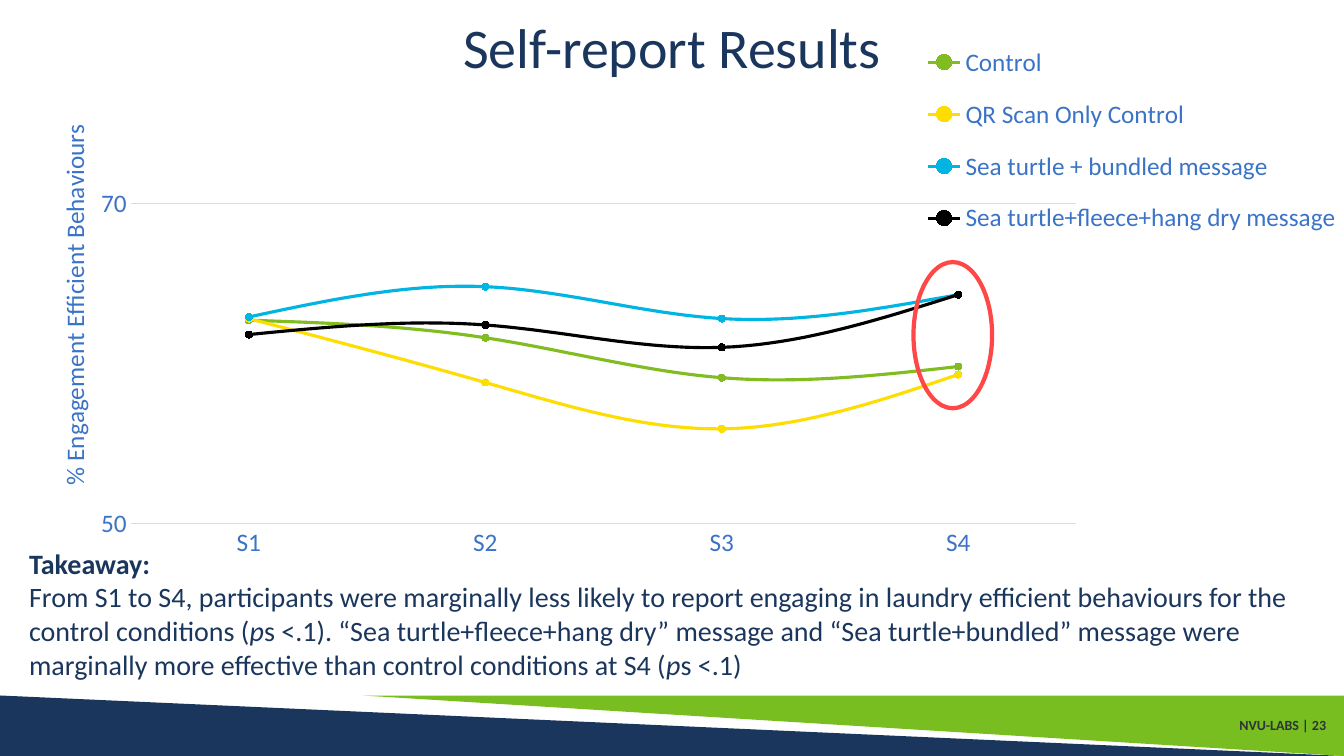
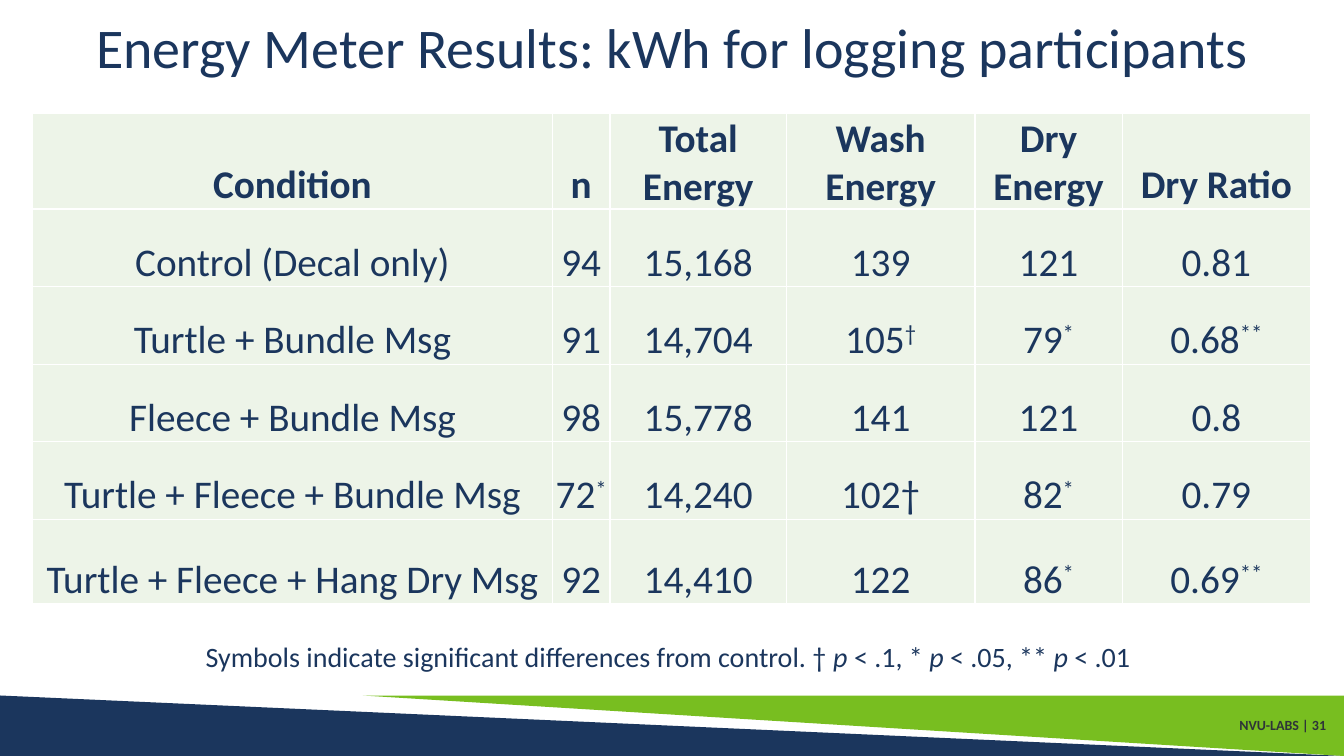
from lxml import etree
from pptx import Presentation
from pptx.chart.data import CategoryChartData
from pptx.dml.color import RGBColor
from pptx.enum.chart import XL_CHART_TYPE as ChartType, XL_LEGEND_POSITION as LegendPosition
from pptx.enum.chart import XL_MARKER_STYLE as MarkerStyle, XL_TICK_MARK as TickMark
from pptx.enum.shapes import MSO_SHAPE as Preset
from pptx.enum.text import MSO_ANCHOR as Anchor, MSO_AUTO_SIZE as AutoSize, PP_ALIGN as Align
from pptx.oxml import parse_xml
from pptx.oxml.ns import nsdecls, qn
from pptx.util import Inches, Pt

# Shared look
FONT = "Calibri"
NAVY, GREEN, GRAY = "1B365D", "78BE20", "2E3438"
AXIS_BLUE, GRID_BLUE = "3B74C6", "D2DFF2"
RED, WHITE, CELL_GREEN = "FF4747", "FFFFFF", "EDF4E8"
WIDTH, HEIGHT = 13.33, 7.5
BANDS = [(0, WIDTH, 0, NAVY), (3.6, 9.73, 180, GREEN)]  # left, width, rotation, colour
BAND_TOP, BAND_HEIGHT = 6.9, 0.6
FOOTER = "NVU-LABS | {}"

# Content of the chart slide
SURVEYS = ["S1", "S2", "S3", "S4"]
SERIES = [
    ("Control", "81BD20", [62.7, 61.6, 59.1, 59.8]),
    ("QR Scan Only Control", "FEDD00", [62.8, 58.8, 55.9, 59.3]),
    ("Sea turtle + bundled message", "00B5E2", [62.9, 64.8, 62.8, 64.3]),
    ("Sea turtle+fleece+hang dry message", "000000", [61.8, 62.4, 61, 64.3]),
]
AXIS_TITLE = "% Engagement Efficient Behaviours"
TAKEAWAY = [  # paragraphs of (text, style) runs
    [("Takeaway:", "bold")],
    [
        ("From S1 to S4, participants were marginally less likely to report engaging in laundry "
         "efficient behaviours for the control conditions (", ""),
        ("p", "italic"),
        ("s <.1). “Sea turtle+fleece+hang dry” message and “Sea turtle+bundled” message were "
         "marginally more effective than control conditions at S4 (", ""),
        ("p", "italic"),
        ("s <.1)", ""),
    ],
]

# Content of the table slide; a tuple holds a value and its superscript
TABLE_ROWS = [
    ["Condition", "n", "Total Energy", "Wash Energy", "Dry Energy", "Dry Ratio"],
    ["Control (Decal only)", "94", "15,168", "139", "121", "0.81"],
    ["Turtle + Bundle Msg", "91", "14,704", ("105", "†"), ("79", "*"), ("0.68", "**")],
    ["Fleece + Bundle Msg", "98", "15,778", "141", "121", "0.8"],
    ["Turtle + Fleece + Bundle Msg", ("72", "*"), "14,240", "102†", ("82", "*"), "0.79"],
    ["Turtle + Fleece + Hang Dry Msg", "92", "14,410", "122", ("86", "*"), ("0.69", "**")],
]
COLUMN_WIDTHS = [5.16, 0.57, 1.75, 1.87, 1.46, 1.87]
ROW_HEIGHTS = [0.86, 0.77, 0.77, 0.77, 0.77, 0.84]
SYMBOL_NOTE = [[
    ("Symbols indicate significant differences from control. † ", ""), ("p ", "italic"),
    ("< .1, * ", ""), ("p", "italic"), (" < .05, ** ", ""), ("p", "italic"), (" < .01", ""),
]]


def rgb(color):
    return RGBColor.from_string(color)


def box(*lengths):
    return [Inches(length) for length in lengths]


def set_font(font, size, color, bold=False):
    font.name, font.size, font.bold = FONT, Pt(size), bold
    font.color.rgb = rgb(color)


def set_line(line, color, width):
    line.color.rgb = rgb(color)
    line.width = Pt(width)


def add_runs(paragraph, runs, size, color, bold=False):
    for text, style in runs:
        run = paragraph.add_run()
        run.text = text
        set_font(run.font, size, color, bold or style == "bold")
        if style == "italic":
            run.font.italic = True
        elif style == "super":
            run._r.get_or_add_rPr().set("baseline", "30000")


def add_text(slide, place, paragraphs, size, wrap=True):
    text_frame = slide.shapes.add_textbox(*box(*place)).text_frame
    text_frame.word_wrap = wrap
    text_frame.auto_size = AutoSize.SHAPE_TO_FIT_TEXT
    for index, runs in enumerate(paragraphs):
        paragraph = text_frame.add_paragraph() if index else text_frame.paragraphs[0]
        add_runs(paragraph, runs, size, NAVY)


def add_slide(presentation, title, number):
    """A slide with the two bands, the footer and the title."""
    slide = presentation.slides.add_slide(presentation.slide_layouts[5])
    for left, width, rotation, color in BANDS:
        band = slide.shapes.add_shape(
            Preset.RIGHT_TRIANGLE, *box(left, BAND_TOP, width, BAND_HEIGHT))
        band.rotation = rotation
        band.shadow.inherit = False
        band.fill.solid()
        band.fill.fore_color.rgb = rgb(color)
        band.line.fill.background()

    footer = slide.shapes.add_textbox(*box(11.74, 7.02, 1.51, 0.37))
    heading = slide.shapes.title
    heading.left, heading.top, heading.width, heading.height = box(0, 0, WIDTH, 0.99)
    for shape, text, align, size, color, bold in [
        (footer, FOOTER.format(number), Align.RIGHT, 10, GRAY, True),
        (heading, title, Align.CENTER, 40, NAVY, False),
    ]:
        text_frame = shape.text_frame
        text_frame.text = text
        text_frame.word_wrap = True
        text_frame.vertical_anchor = Anchor.MIDDLE
        paragraph = text_frame.paragraphs[0]
        paragraph.alignment, paragraph.line_spacing = align, 0.9
        set_font(paragraph.runs[0].font, size, color, bold)
    return slide


def set_layout(element, index, inner=False, **parts):
    """Place a chart part by fractions of the chart's size."""
    for layout in element.findall(qn("c:layout")):
        element.remove(layout)
    layout = parse_xml(f"<c:layout {nsdecls('c')}><c:manualLayout/></c:layout>")
    settings = {"layoutTarget": "inner"} if inner else {}
    settings.update(xMode="edge", yMode="edge", **parts)
    for name, value in settings.items():
        etree.SubElement(layout[0], qn(f"c:{name}")).set("val", str(value))
    element.insert(index, layout)


def add_line_chart(slide):
    data = CategoryChartData(number_format="0.0")
    data.categories = SURVEYS
    for name, _, values in SERIES:
        data.add_series(name, values)
    chart = slide.shapes.add_chart(
        ChartType.LINE_MARKERS, *box(0.39, 0.11, 12.94, 5.69), data).chart
    chart.has_title = False
    set_font(chart.font, 18, NAVY)
    chart.plots[0].vary_by_categories = False
    for series, (_, color, _) in zip(chart.plots[0].series, SERIES):
        series.smooth = True
        set_line(series.format.line, color, 2.25)
        marker = series.marker
        marker.style, marker.size = MarkerStyle.CIRCLE, 5
        marker.format.fill.solid()
        marker.format.fill.fore_color.rgb = rgb(color)
        set_line(marker.format.line, color, 0.75)

    # Axes
    category_axis, value_axis = chart.category_axis, chart.value_axis
    for axis in (category_axis, value_axis):
        axis.major_tick_mark = axis.minor_tick_mark = TickMark.NONE
        set_font(axis.tick_labels.font, 18, AXIS_BLUE)
    set_line(category_axis.format.line, GRID_BLUE, 0.75)
    value_axis.format.line.fill.background()
    value_axis.minimum_scale, value_axis.maximum_scale = 50, 80
    value_axis.major_unit = 20
    value_axis.tick_labels.number_format = "0"
    value_axis.tick_labels.number_format_is_linked = False
    set_line(value_axis.major_gridlines.format.line, GRID_BLUE, 0.75)
    title_frame = value_axis.axis_title.text_frame
    title_frame.text = AXIS_TITLE
    set_font(title_frame.paragraphs[0].runs[0].font, 18, AXIS_BLUE)

    # Legend and placement
    chart.has_legend = True
    legend = chart.legend
    legend.position = LegendPosition.RIGHT
    legend.include_in_layout = True
    set_font(legend.font, 18, AXIS_BLUE)
    plot_area = chart._chartSpace.chart.plotArea
    set_layout(plot_area, 0, inner=True, x=0.07, y=0.057, w=0.725, h=0.836)
    set_layout(legend._element, 1, x=0.675, y=0.025, w=0.325, h=0.4)
    set_layout(value_axis.axis_title._element, 1, x=0.01, y=0.19)


def add_border(cell):
    properties = cell._tc.get_or_add_tcPr()
    for side in ("lnL", "lnR", "lnT", "lnB"):
        properties.append(parse_xml(
            f'<a:{side} {nsdecls("a")} w="{Pt(1)}"><a:solidFill>'
            f'<a:srgbClr val="{WHITE}"/></a:solidFill></a:{side}>'))


def add_energy_table(slide):
    place = box(0.32, 1.13, sum(COLUMN_WIDTHS), sum(ROW_HEIGHTS))
    table = slide.shapes.add_table(len(ROW_HEIGHTS), len(COLUMN_WIDTHS), *place).table
    table.first_row = table.horz_banding = False
    for column, width in zip(table.columns, COLUMN_WIDTHS):
        column.width = Inches(width)
    for row_index, (row, height) in enumerate(zip(table.rows, ROW_HEIGHTS)):
        row.height = Inches(height)
        for cell, content in zip(row.cells, TABLE_ROWS[row_index]):
            value, symbol = content if isinstance(content, tuple) else (content, "")
            runs = [(value, "")] + ([(symbol, "super")] if symbol else [])
            add_border(cell)
            cell.fill.solid()
            cell.fill.fore_color.rgb = rgb(CELL_GREEN)
            cell.vertical_anchor = Anchor.BOTTOM
            cell.margin_left = cell.margin_right = cell.margin_top = Inches(0.01)
            cell.margin_bottom = 0
            paragraph = cell.text_frame.paragraphs[0]
            paragraph.alignment = Align.CENTER
            add_runs(paragraph, runs, 28, NAVY, bold=row_index == 0)


def main():
    presentation = Presentation()
    presentation.slide_width, presentation.slide_height = box(WIDTH, HEIGHT)

    # Self-report chart
    slide = add_slide(presentation, "Self-report Results", 23)
    add_line_chart(slide)
    add_text(slide, (0.19, 5.37, 13.14, 1.45), TAKEAWAY, 20)
    highlight = slide.shapes.add_shape(Preset.OVAL, *box(9.06, 2.6, 0.78, 1.45))
    highlight.shadow.inherit = False
    highlight.fill.background()
    set_line(highlight.line, RED, 3)

    # Energy table
    slide = add_slide(presentation, "Energy Meter Results: kWh for logging participants", 31)
    add_text(slide, (1.94, 6.3, 9.46, 0.44), SYMBOL_NOTE, 20, wrap=False)
    add_energy_table(slide)

    presentation.save("out.pptx")


if __name__ == "__main__":
    main()
